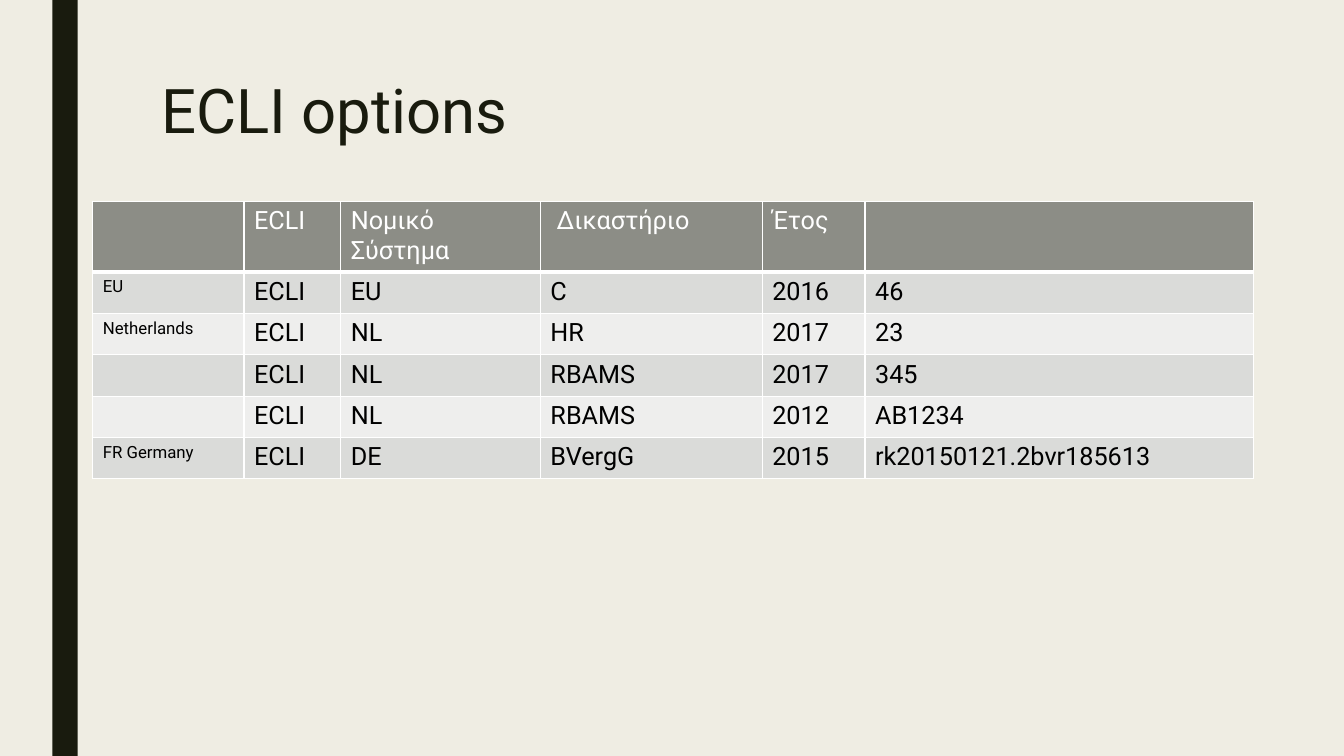
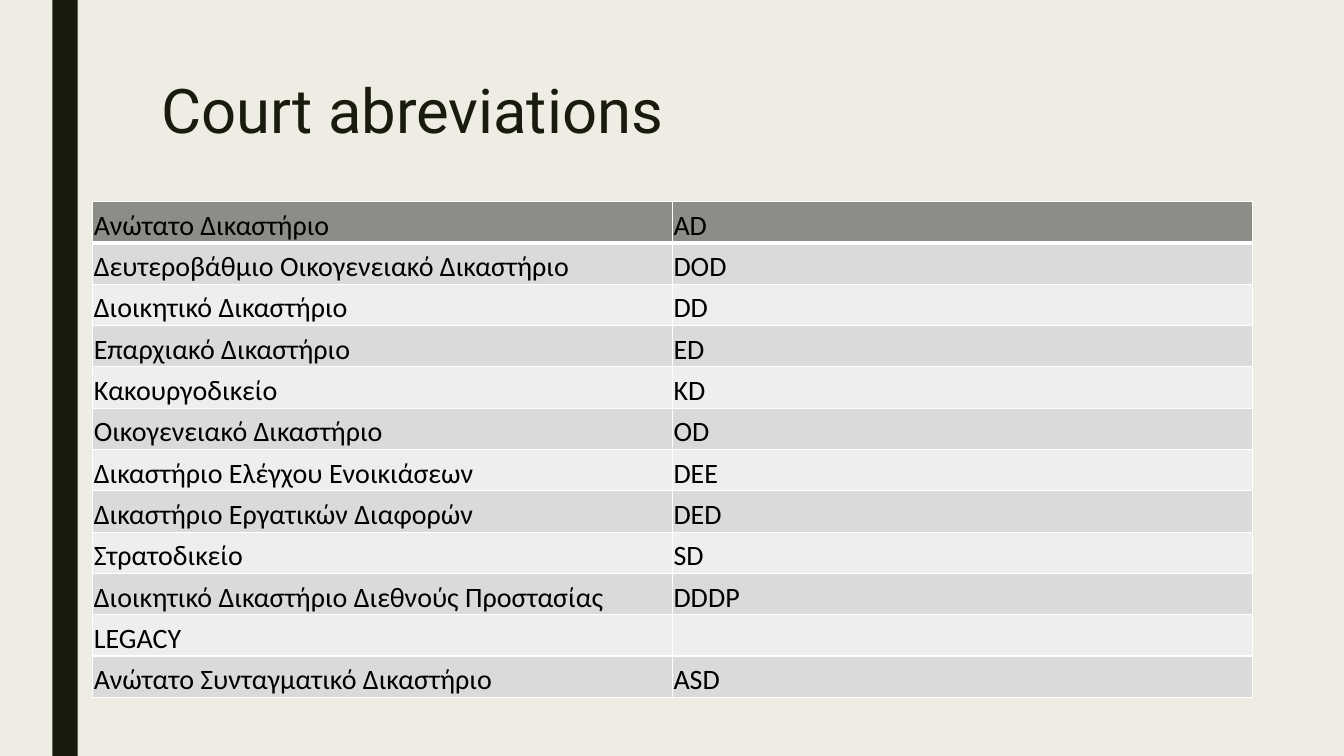
from lxml import etree
from pptx import Presentation
from pptx.dml.color import RGBColor
from pptx.enum import shapes, text
from pptx.oxml import ns
from pptx.util import Inches, Pt

INK, PAPER, WHITE, BLACK = "191B0E", "EFEDE3", "FFFFFF", "000000"
HEADER_FILL, BAND_FILLS = "8C8D86", ("DADBD9", "EEEEED")
ROW_HEIGHT = 0.41


def paint(fill, color):
    fill.solid()
    fill.fore_color.rgb = RGBColor.from_string(color)


def add_border(cell, side, points):
    line = etree.SubElement(cell._tc.get_or_add_tcPr(), ns.qn(f"a:ln{side}"), w=str(Pt(points)))
    solid = etree.SubElement(line, ns.qn("a:solidFill"))
    etree.SubElement(solid, ns.qn("a:srgbClr"), val=WHITE)


# Content
ecli_rows = [
    ("", "ECLI", "Νομικό Σύστημα", " Δικαστήριο", "Έτος", ""),
    ("EU", "ECLI", "EU", "C", "2016", "46"),
    ("Netherlands", "ECLI", "NL", "HR", "2017", "23"),
    ("", "ECLI", "NL", "RBAMS", "2017", "345"),
    ("", "ECLI", "NL", "RBAMS", "2012", "AB1234"),
    ("FR Germany", "ECLI", "DE", "BVergG", "2015", "rk20150121.2bvr185613"),
]
court_rows = [
    ("Ανώτατο Δικαστήριο", "AD"),
    ("Δευτεροβάθμιο Οικογενειακό Δικαστήριο", "DOD"),
    ("Διοικητικό Δικαστήριο", "DD"),
    ("Επαρχιακό Δικαστήριο", "ED"),
    ("Κακουργοδικείο", "KD"),
    ("Οικογενειακό Δικαστήριο", "OD"),
    ("Δικαστήριο Ελέγχου Ενοικιάσεων", "DEE"),
    ("Δικαστήριο Εργατικών Διαφορών", "DED"),
    ("Στρατοδικείο", "SD"),
    ("Διoικητικό Δικαστήριο Διεθνούς Προστασίας", "DDDP"),
    ("LEGACY", ""),
    ("Ανώτατο Συνταγματικό Δικαστήριο", "ASD"),
]
# Per slide: title, rows, column widths, font, first-column size, size, header colour, tight cells
pages = [
    ("ECLI options", ecli_rows, (1.5, 0.96, 1.98, 2.2, 1.02, 3.85), "Roboto", 12, 18, WHITE, False),
    ("Court abreviations", court_rows, (5.75, 5.75), "Calibri", 20, 20, BLACK, True),
]

prs = Presentation()
prs.slide_width, prs.slide_height = Inches(13.33), Inches(7.5)
paint(prs.slide_master.background.fill, PAPER)

for heading, rows, widths, font_name, label_size, size, header_color, tight in pages:
    slide = prs.slides.add_slide(prs.slide_layouts[6])

    # Vertical band
    band = slide.shapes.add_shape(shapes.MSO_SHAPE.RECTANGLE, Inches(0.52), 0, Inches(0.25), prs.slide_height)
    band.shadow.inherit = False
    paint(band.fill, INK)
    band.line.fill.background()

    # Title
    title = slide.shapes.add_textbox(Inches(1.5), Inches(0.75), Inches(10.5), Inches(1.62))
    title.text_frame.word_wrap = True
    title_line = title.text_frame.paragraphs[0]
    title_line.text = heading
    title_line.line_spacing = 0.89
    title_line.font.name, title_line.font.size = "Roboto", Pt(44)
    paint(title_line.font.fill, INK)

    # Table
    table = slide.shapes.add_table(len(rows), len(widths), Inches(0.92), Inches(2),
                                   Inches(sum(widths)), Inches(ROW_HEIGHT * len(rows))).table
    for column, width in zip(table.columns, widths):
        column.width = Inches(width)
    for r, row in enumerate(rows):
        table.rows[r].height = Inches(ROW_HEIGHT)
        for c, value in enumerate(row):
            cell = table.cell(r, c)
            for side in "LRTB":
                add_border(cell, side, 3 if r == 0 and side == "B" else 1)
            paint(cell.fill, BAND_FILLS[(r - 1) % 2] if r else HEADER_FILL)
            if tight:
                cell.vertical_anchor = text.MSO_ANCHOR.BOTTOM
                cell.margin_left = cell.margin_right = cell.margin_top = Inches(0.01)
                cell.margin_bottom = 0
            entry = cell.text_frame.paragraphs[0]
            entry.text = value
            entry.font.name, entry.font.bold = font_name, False
            entry.font.size = Pt(label_size if c == 0 and r else size)
            paint(entry.font.fill, BLACK if r else header_color)

prs.save("out.pptx")
